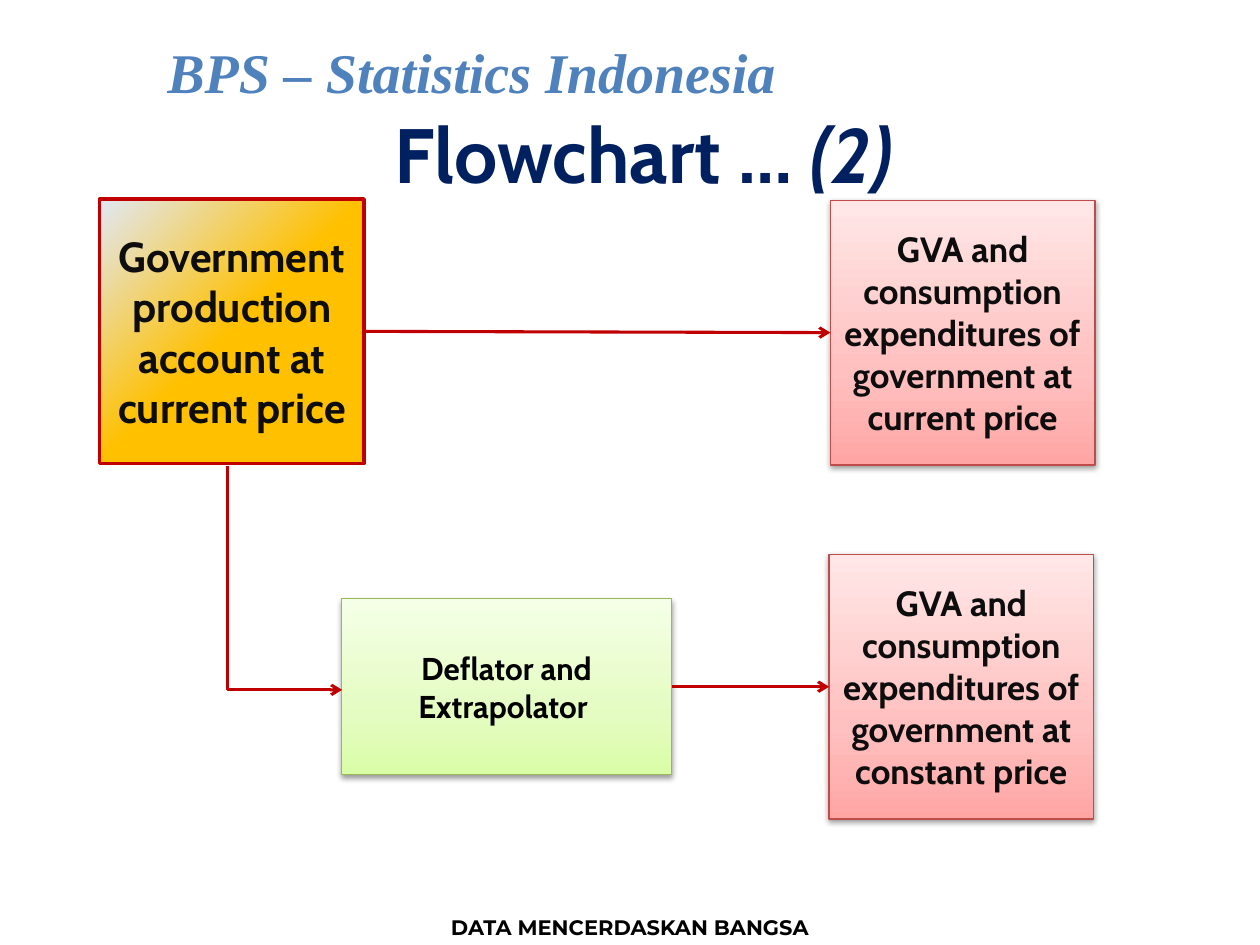
from pptx import Presentation
from pptx.dml.color import RGBColor
from pptx.enum.shapes import MSO_CONNECTOR, MSO_SHAPE
from pptx.enum.text import MSO_ANCHOR, PP_ALIGN
from pptx.oxml import parse_xml
from pptx.oxml.ns import nsdecls, qn
from pptx.util import Inches, Pt

BLACK = RGBColor(0x00, 0x00, 0x00)
INK = RGBColor(0x0D, 0x0D, 0x0D)
NAVY = RGBColor(0x00, 0x20, 0x60)
BLUE = RGBColor(0x4F, 0x81, 0xBD)
RED = RGBColor(0xC0, 0x00, 0x00)
ROSE = RGBColor(0xBF, 0x4C, 0x48)
GREEN = RGBColor(0x98, 0xB9, 0x55)

# Gradient stops as position in percent and colour
GOLD_STOPS = [(50, RGBColor(0xFF, 0xC0, 0x00)), (100, RGBColor(0xE1, 0xE8, 0xF5))]
ROSE_STOPS = [(0, RGBColor(0xFF, 0xA6, 0xA5)), (35, RGBColor(0xFF, 0xC0, 0xBF)),
              (100, RGBColor(0xFF, 0xE7, 0xE7))]
GREEN_STOPS = [(0, RGBColor(0xDA, 0xFD, 0xA7)), (35, RGBColor(0xE4, 0xFC, 0xC2)),
               (100, RGBColor(0xF5, 0xFF, 0xE7))]
UPWARD = '<a:lin ang="16200000" scaled="1"/>'
FROM_CORNER = '<a:path path="circle"><a:fillToRect l="100000" t="100000"/></a:path>'
SHADOW = ('<a:outerShdw blurRad="40000" dist="20000" dir="5400000" rotWithShape="0">'
          '<a:srgbClr val="000000"><a:alpha val="38000"/></a:srgbClr></a:outerShdw>')

presentation = Presentation()
presentation.slide_width, presentation.slide_height = Inches(10), Inches(7.5)
slide = presentation.slides.add_slide(presentation.slide_layouts[5])


def write(shape, text, font_name, size, color):
    frame = shape.text_frame
    frame.word_wrap = True
    paragraph = frame.paragraphs[0]
    paragraph.text = text
    paragraph.alignment = PP_ALIGN.CENTER
    font = paragraph.font
    font.name, font.size, font.bold = font_name, Pt(size), True
    font.color.rgb = color
    return paragraph


def style_arrow(connector):
    connector.line.color.rgb = RED
    connector.line.width = Pt(1.75)
    connector.line._get_or_add_ln().append(
        parse_xml(f'<a:tailEnd {nsdecls("a")} type="arrow"/>'))
    connector._element.spPr.append(parse_xml(f'<a:effectLst {nsdecls("a")}/>'))


# Footer and header
footer = slide.shapes.add_textbox(0, Inches(7.21), presentation.slide_width, Inches(0.3))
write(footer, "DATA MENCERDASKAN BANGSA", "Montserrat", 12, BLACK)
header = slide.shapes.add_textbox(Inches(0.83), Inches(0.25), Inches(5.83), Inches(0.64))
write(header, "BPS – Statistics Indonesia", "Times New Roman", 32, BLUE).font.italic = True

# Title
title = slide.shapes.title
title.left, title.top, title.width, title.height = map(Inches, (0.52, 0.78, 9.18, 0.87))
title.text_frame.vertical_anchor = MSO_ANCHOR.MIDDLE
title_paragraph = write(title, "Flowchart … ", "Cabin", 44, NAVY)
number = title_paragraph.add_run()
number.text = "(2)"
number.font.italic = True

# Boxes: left, top, width, height, text, size, ink, stops, direction, line, weight, effect
SIDE = 2.1
RESULT = "GVA and consumption expenditures of government at {} price"
boxes = []
for left, top, width, height, text, size, ink, stops, direction, edge, weight, effect in [
    (0.79, 1.58, SIDE, SIDE, "Government production account at current price", 24, INK,
     GOLD_STOPS, FROM_CORNER, RED, 2, ""),
    (6.59, 1.59, SIDE, SIDE, RESULT.format("current"), 20, INK,
     ROSE_STOPS, UPWARD, ROSE, 0.75, SHADOW),
    (6.58, 4.4, SIDE, SIDE, RESULT.format("constant"), 20, INK,
     ROSE_STOPS, UPWARD, ROSE, 0.75, SHADOW),
    (2.71, 4.75, 2.62, 1.4, "Deflator and Extrapolator ", 18, BLACK,
     GREEN_STOPS, UPWARD, GREEN, 0.75, SHADOW),
]:
    box = slide.shapes.add_shape(MSO_SHAPE.RECTANGLE, *map(Inches, (left, top, width, height)))
    box.line.color.rgb = edge
    box.line.width = Pt(weight)
    box.text_frame.vertical_anchor = MSO_ANCHOR.MIDDLE
    write(box, text, "Cabin", size, ink)
    stop_list = "".join(f'<a:gs pos="{position * 1000}"><a:srgbClr val="{color}"/></a:gs>'
                        for position, color in stops)
    properties = box._element.spPr
    properties.find(qn("a:prstGeom")).addnext(parse_xml(
        f'<a:gradFill {nsdecls("a")} rotWithShape="1"><a:gsLst>{stop_list}</a:gsLst>'
        f'{direction}</a:gradFill>'))
    properties.append(parse_xml(f'<a:effectLst {nsdecls("a")}>{effect}</a:effectLst>'))
    boxes.append(box)
account, current_result, constant_result, deflator = boxes

# Straight arrows from right side to left side
for source, target in [(deflator, constant_result), (account, current_result)]:
    arrow = slide.shapes.add_connector(MSO_CONNECTOR.STRAIGHT, 0, 0, 0, 0)
    arrow.begin_connect(source, 3)
    arrow.end_connect(target, 1)
    style_arrow(arrow)

# Bent arrow: down from the account, then right to the deflator
bent_arrow = slide.shapes.add_connector(
    MSO_CONNECTOR.ELBOW, *map(Inches, (1.37, 4.13, 3.15, 5.04)))
bent_properties = bent_arrow._element.spPr
bent_properties.find(qn("a:prstGeom")).set("prst", "bentConnector2")
frame_transform = bent_properties.find(qn("a:xfrm"))
frame_transform.set("rot", "16200000")
frame_transform.set("flipH", "1")
style_arrow(bent_arrow)

presentation.save("out.pptx")
